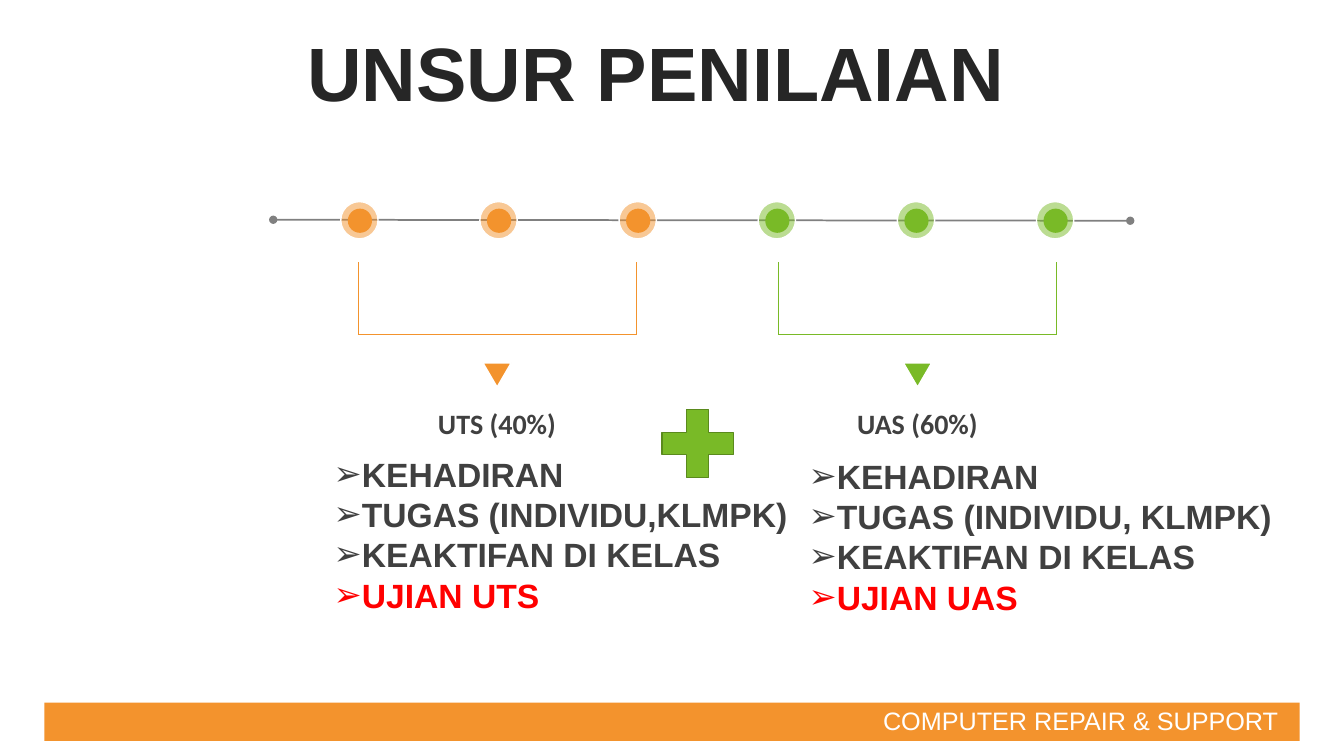
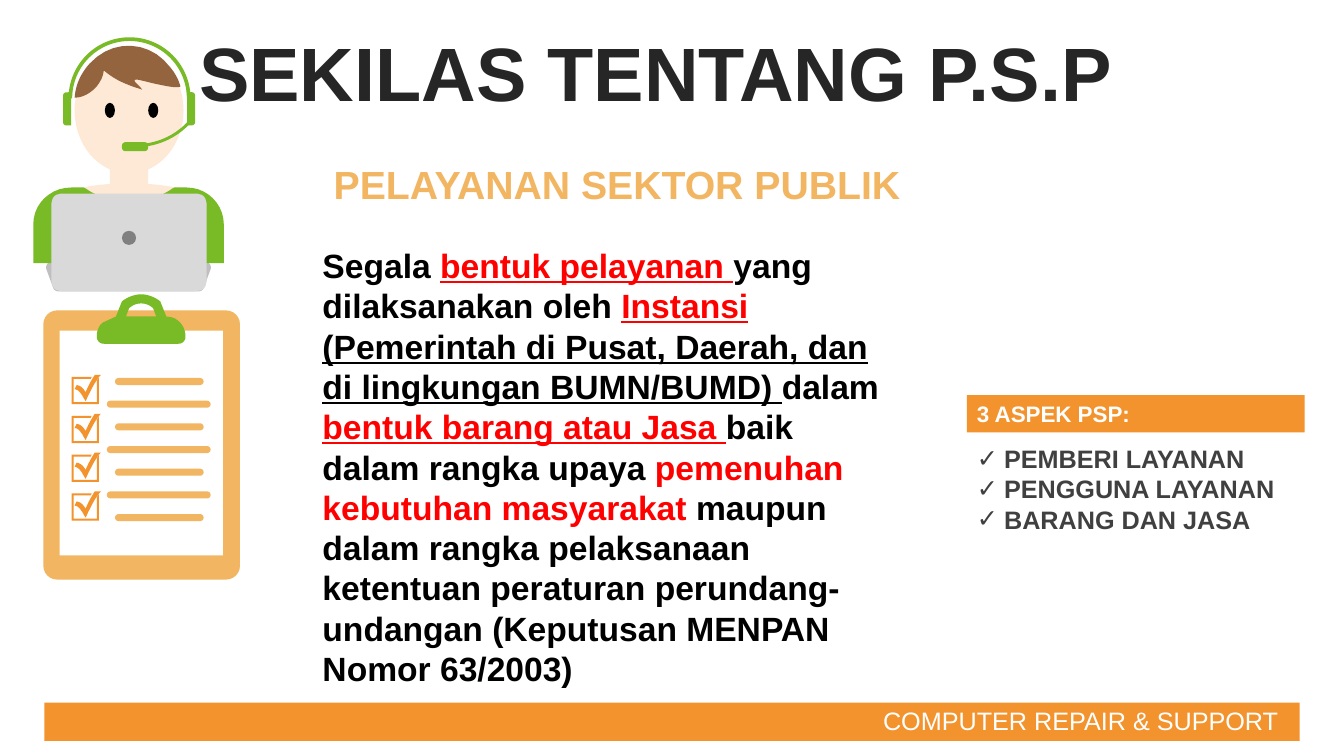
from lxml import etree
from pptx import Presentation
from pptx.dml.color import RGBColor
from pptx.enum.shapes import MSO_CONNECTOR, MSO_SHAPE
from pptx.enum.text import MSO_ANCHOR, PP_ALIGN
from pptx.oxml.ns import qn
from pptx.util import Inches, Pt

RECT, OVAL, ROUND = MSO_SHAPE.RECTANGLE, MSO_SHAPE.OVAL, MSO_SHAPE.ROUNDED_RECTANGLE
ARC, CAP = MSO_SHAPE.BLOCK_ARC, MSO_SHAPE.ROUND_2_SAME_RECTANGLE
TRIANGLE, PLUS = MSO_SHAPE.ISOSCELES_TRIANGLE, MSO_SHAPE.MATH_PLUS
STRAIGHT = MSO_CONNECTOR.STRAIGHT
TOP, MIDDLE = MSO_ANCHOR.TOP, MSO_ANCHOR.MIDDLE
LEFT, CENTER = PP_ALIGN.LEFT, PP_ALIGN.CENTER

ORANGE, GREEN, SAND, SKIN = "F3932D", "79BA27", "F2B662", "FDE9D5"
WHITE, BLACK, RED, GREY = "FFFFFF", "000000", "FF0000", "808080"
DARK, TEXT = "262626", "404040"
OUTLINE = "outline"

FOOTER = "COMPUTER REPAIR & SUPPORT"
TITLES = ["UNSUR PENILAIAN", "SEKILAS TENTANG P.S.P"]

EXAMS = [
    {"name": "UTS (40%)", "color": ORANGE, "bracket": 3.55, "list": (3.31, 4.45, 4.56, 1.72),
     "items": ["KEHADIRAN", "TUGAS (INDIVIDU,KLMPK)", "KEAKTIFAN DI KELAS"], "final": "UJIAN UTS"},
    {"name": "UAS (60%)", "color": GREEN, "bracket": 7.72, "list": (8.02, 4.47, 4.83, 1.72),
     "items": ["KEHADIRAN", "TUGAS (INDIVIDU, KLMPK)", "KEAKTIFAN DI KELAS"], "final": "UJIAN UAS"},
]

SUBTITLE = "PELAYANAN SEKTOR PUBLIK"
DEFINITION = [
    ("Segala ", BLACK, False),
    ("bentuk pelayanan ", RED, True),
    ("yang dilaksanakan oleh ", BLACK, False),
    ("Instansi ", RED, True),
    ("(Pemerintah di Pusat, Daerah, dan di lingkungan BUMN/BUMD) ", BLACK, True),
    ("dalam ", BLACK, False),
    ("bentuk barang atau Jasa ", RED, True),
    ("baik dalam rangka upaya ", BLACK, False),
    ("pemenuhan kebutuhan masyarakat ", RED, False),
    ("maupun dalam rangka pelaksanaan ketentuan peraturan perundang-undangan "
     "(Keputusan MENPAN Nomor 63/2003)", BLACK, False),
]
ASPECT_HEAD = "3 ASPEK PSP:"
ASPECTS = ["PEMBERI LAYANAN", "PENGGUNA LAYANAN", "BARANG DAN JASA"]

LAPTOP_BASE = [[(0.51, 2.6), (2.04, 2.6), (2.08, 2.6, 2.1, 2.64, 2.09, 2.67), (2.02, 2.86),
                (2.01, 2.88, 1.99, 2.89, 1.97, 2.89), (0.58, 2.89),
                (0.56, 2.89, 0.54, 2.88, 0.53, 2.86), (0.46, 2.67),
                (0.45, 2.64, 0.47, 2.6, 0.51, 2.6)]]
SHIRT = [[(0.71, 1.86), (0.83, 1.86), (0.85, 1.87), (0.94, 1.94, 1.1, 1.99, 1.28, 1.99),
          (1.46, 1.99, 1.62, 1.94, 1.71, 1.87), (1.73, 1.86), (1.85, 1.86),
          (2.05, 1.86, 2.22, 2.02, 2.22, 2.23), (2.22, 2.61), (0.33, 2.61), (0.33, 2.23),
          (0.33, 2.02, 0.5, 1.86, 0.71, 1.86)]]
HAIR = [[(0.74, 0.97), (0.75, 0.84, 0.8, 0.73, 0.89, 0.63), (1.12, 0.38, 1.49, 0.4, 1.69, 0.67),
         (1.74, 0.73, 1.77, 0.79, 1.79, 0.86), (1.73, 0.89, 1.43, 0.8, 1.36, 0.79),
         (1.29, 0.79, 1.38, 0.84, 1.41, 0.89), (1.36, 0.87, 1.18, 0.83, 1.03, 0.7),
         (1.01, 0.85, 0.87, 0.97, 0.74, 0.97)]]
CLIP = [[(1.4, 2.92), (1.47, 2.92, 1.54, 2.95, 1.59, 2.99), (1.65, 3.14),
         (1.76, 3.14, 1.84, 3.23, 1.84, 3.34), (1.84, 3.38, 1.81, 3.41, 1.77, 3.41), (1.03, 3.41),
         (0.99, 3.41, 0.96, 3.38, 0.96, 3.34), (0.96, 3.28, 0.98, 3.23, 1.02, 3.2), (1.15, 3.14),
         (1.21, 2.99), (1.26, 2.95, 1.33, 2.92, 1.4, 2.92)],
        [(1.4, 3.01), (1.35, 3.01, 1.31, 3.03, 1.28, 3.06), (1.25, 3.14), (1.55, 3.14),
         (1.52, 3.06), (1.49, 3.03, 1.45, 3.01, 1.4, 3.01)]]
CHECK = [[(0.71, 3.74), (0.91, 3.74), (0.9, 3.76), (0.73, 3.76), (0.73, 3.99), (0.96, 3.99),
          (0.96, 3.78), (0.98, 3.75), (0.98, 4.01), (0.71, 4.01)],
         [(1, 3.72), (0.95, 3.77, 0.89, 3.89, 0.85, 3.98), (0.82, 3.94, 0.8, 3.87, 0.74, 3.86),
          (0.76, 3.82), (0.81, 3.83, 0.82, 3.85, 0.85, 3.89), (0.88, 3.82, 0.89, 3.8, 0.94, 3.72)]]

AGENT = [
    (OVAL, (0.74, 0.47, 1.08, 1.25), SKIN, {}),
    (ARC, (0.68, 0.37, 1.21, 1.21), GREEN, {"adj": (108, 0, 0.03)}),
    (CAP, (1.73, 1.04, 0.33, 0.08), GREEN, {"adj": (0.4, 0), "rot": 90}),
    (CAP, (0.5, 1.04, 0.33, 0.08), GREEN, {"adj": (0.4, 0), "rot": 270}),
    (ARC, (0.62, 0, 1.46, 1.46), GREEN, {"adj": (25.78, 53.31, 0.02)}),
    (ROUND, (1.21, 1.41, 0.26, 0.09), GREEN, {"adj": (0.38,)}),
    (OUTLINE, LAPTOP_BASE, "BFBFBF", {}),
    (OVAL, (0.67, 1.82, 1.22, 0.24), SKIN, {}),
    (OUTLINE, SHIRT, GREEN, {}),
    (RECT, (1.09, 1.57, 0.38, 0.31), SKIN, {}),
    (OVAL, (1.04, 1.02, 0.1, 0.15), BLACK, {}),
    (OVAL, (1.47, 1.02, 0.1, 0.15), BLACK, {}),
    (OUTLINE, HAIR, "94643F", {}),
    (ROUND, (0.51, 1.92, 1.54, 0.97), "D9D9D9", {"adj": (0.1,)}),
    (OVAL, (1.21, 2.29, 0.14, 0.14), GREY, {}),
]
CLIPBOARD = [
    (ROUND, (0.43, 3.08, 1.95, 2.67), SAND, {"adj": (0.07,)}),
    (RECT, (0.59, 3.28, 1.62, 2.23), WHITE, {}),
    (OUTLINE, CLIP, GREEN, {}),
]


def rgb(color):
    """Turn a hex string into a colour."""
    return RGBColor.from_string(color)


def inches(values):
    """Turn numbers into lengths."""
    return [Inches(v) for v in values]


def paint(shape, color, line=None, alpha=None):
    """Give a shape its fill and its outline of one point, if any."""
    shape.shadow.inherit = False
    shape.fill.solid()
    shape.fill.fore_color.rgb = rgb(color)
    if alpha:
        clr = shape.element.spPr.find(qn("a:solidFill")).find(qn("a:srgbClr"))
        etree.SubElement(clr, qn("a:alpha")).set("val", str(alpha * 1000))
    if line:
        shape.line.color.rgb = rgb(line)
        shape.line.width = Pt(1)
    else:
        shape.line.fill.background()
    return shape


def add_preset(s, kind, box, color, adj=(), rot=0, **style):
    """Add a painted preset shape."""
    shape = s.shapes.add_shape(kind, *inches(box))
    for i, value in enumerate(adj):
        shape.adjustments[i] = value
    shape.rotation = rot
    return paint(shape, color, **style)


def flatten(contour, steps=10):
    """Turn points and Bezier segments into points in thousandths of an inch."""
    points = [contour[0]]
    for seg in contour[1:]:
        if len(seg) == 2:
            points.append(seg)
            continue
        nodes = [points[-1], seg[:2], seg[2:4], seg[4:]]
        for t in (i / steps for i in range(1, steps + 1)):
            weights = ((1 - t) ** 3, 3 * t * (1 - t) ** 2, 3 * t * t * (1 - t), t ** 3)
            points.append(tuple(sum(w * n[k] for w, n in zip(weights, nodes)) for k in (0, 1)))
    return [(x * 1000, y * 1000) for x, y in points]


def add_outline(s, contours, color, dy=0):
    """Add a painted freeform, moved down by dy inches."""
    builder = None
    for contour in contours:
        points = [(x, y + dy * 1000) for x, y in flatten(contour)]
        if builder is None:
            builder = s.shapes.build_freeform(*points[0], scale=Inches(1) / 1000)
        else:
            builder.move_to(*points[0])
        builder.add_line_segments(points[1:], close=True)
    return paint(builder.convert_to_shape(), color)


def draw(s, parts):
    """Draw a list of presets and outlines from back to front."""
    for kind, form, color, options in parts:
        if kind == OUTLINE:
            add_outline(s, form, color)
        else:
            add_preset(s, kind, form, color, **options)


def add_line(s, start, end, color, width, ends=None):
    """Add a straight line, with the same mark at both ends if named."""
    line = s.shapes.add_connector(STRAIGHT, *inches(start + end))
    line.line.color.rgb = rgb(color)
    line.line.width = Pt(width)
    if ends:
        ln = line.element.spPr.find(qn("a:ln"))
        for tag in ("a:headEnd", "a:tailEnd"):
            etree.SubElement(ln, qn(tag)).set("type", ends)
    etree.SubElement(line.element.spPr, qn("a:effectLst"))


def write(shape, paragraphs, size, font="Arial", bold=True, align=LEFT, anchor=TOP,
          side=0.1, left=None, spacing=None, bullet=None, indent=0):
    """Fill a shape with paragraphs, each a list of (text, colour, underline) runs."""
    tf = shape.text_frame
    frame = {"word_wrap": True, "vertical_anchor": anchor,
             "margin_left": Inches(side if left is None else left), "margin_right": Inches(side),
             "margin_top": Inches(0.05), "margin_bottom": Inches(0.05)}
    for name, value in frame.items():
        setattr(tf, name, value)
    for i, runs in enumerate(paragraphs):
        p = tf.add_paragraph() if i else tf.paragraphs[0]
        p.alignment = align
        if spacing:
            p.line_spacing = spacing
        if bullet:
            ppr = p._p.get_or_add_pPr()
            ppr.set("marL", str(Inches(indent)))
            ppr.set("indent", str(-Inches(indent)))
            etree.SubElement(ppr, qn("a:buFont")).set("typeface", "Arial")
            etree.SubElement(ppr, qn("a:buChar")).set("char", bullet)
        for text, color, underline in runs:
            r = p.add_run()
            r.text = text
            style = {"name": font, "size": Pt(size), "bold": bold, "underline": underline}
            for name, value in style.items():
                setattr(r.font, name, value)
            r.font.color.rgb = rgb(color)


def add_text(s, box, paragraphs, size, **options):
    """Add a text box."""
    write(s.shapes.add_textbox(*inches(box)), paragraphs, size, **options)


def plain(lines, color):
    """Make one single-run paragraph of each line."""
    return [[(line, color, False)] for line in lines]


def add_slide(prs, layout, title):
    """Add a slide with its formatted title."""
    s = prs.slides.add_slide(layout)
    shape = s.shapes.title
    box = dict(zip(("left", "top", "width", "height"), inches((0, 0.37, 13.01, 0.79))))
    for name, value in box.items():
        setattr(shape, name, value)
    write(shape, plain([title], DARK), 54, align=CENTER, anchor=MIDDLE, spacing=0.9)
    return s


def add_footer(s, layout):
    """Draw the footer band and move it into the layout."""
    for ph in list(layout.placeholders)[1:]:
        layout.shapes.element.remove(ph.element)
    band = add_preset(s, RECT, (0.44, 6.97, 12.45, 0.38), ORANGE)
    label = s.shapes.add_textbox(*inches((8.66, 6.95, 4.23, 0.4)))
    write(label, plain([FOOTER], WHITE), 18, bold=False, anchor=MIDDLE)
    for shape in (band, label):
        layout.shapes.element.append(shape.element)


def build_grading(s):
    """Draw the timeline and the two exams."""
    add_line(s, (2.71, 2.18), (11.21, 2.19), GREY, 1.25, "oval")
    for i in range(6):
        x, color = 3.57 + 1.38 * i, EXAMS[i // 3]["color"]
        add_preset(s, OVAL, (x - 0.19, 2, 0.37, 0.37), color, line=WHITE, alpha=50)
        add_preset(s, OVAL, (x - 0.12, 2.07, 0.24, 0.24), color)
    for exam in EXAMS:
        x, color = exam["bracket"], exam["color"]
        corners = [(x, 2.6), (x, 3.32), (x + 2.76, 3.32), (x + 2.76, 2.6)]
        for start, end in zip(corners, corners[1:]):
            add_line(s, start, end, color, 0.5)
        mid = x + 1.38
        add_preset(s, TRIANGLE, (mid - 0.14, 3.6, 0.28, 0.24), color, rot=180, line=WHITE)
        add_text(s, (mid - 1.12, 3.98, 2.24, 0.44), plain([exam["name"]], TEXT), 20,
                 font="Calibri", align=CENTER, side=0)
        items = plain(exam["items"], TEXT) + plain([exam["final"]], RED)
        add_text(s, exam["list"], items, 24, side=0, bullet="➢", indent=0.25)
    add_preset(s, PLUS, (6.44, 3.94, 0.96, 0.92), GREEN, line="5A8A1D")


def build_service(s):
    """Draw the definition, the agent, the clipboard and the three aspects."""
    add_text(s, (3.1, 1.22, 6.65, 1.16), plain([SUBTITLE], SAND), 28,
             anchor=MIDDLE, left=0.21, spacing=1.1)
    add_text(s, (3.1, 2.38, 5.88, 4.54), [DEFINITION], 24)
    draw(s, AGENT + CLIPBOARD)
    for i in range(7):
        x, width = ((1.14, 0.88), (1.06, 1.03))[i % 2]
        add_preset(s, ROUND, (x, 3.75 + 0.225 * i, width, 0.07), SAND, adj=(0.5,))
    for i in range(4):
        add_outline(s, CHECK, ORANGE, 0.385 * i)
    head = add_preset(s, RECT, (9.59, 3.92, 3.35, 0.37), ORANGE)
    write(head, plain([ASPECT_HEAD], WHITE), 16, anchor=MIDDLE)
    add_text(s, (9.59, 4.35, 3.35, 1.01), plain(ASPECTS, TEXT), 18, bullet="✓", indent=0.27)


def main():
    """Build and save the two slides."""
    prs = Presentation()
    prs.slide_width, prs.slide_height = inches((13.33, 7.5))
    layout = prs.slide_layouts[5]
    grading, service = [add_slide(prs, layout, title) for title in TITLES]
    add_footer(grading, layout)
    build_grading(grading)
    build_service(service)
    prs.save("out.pptx")


if __name__ == "__main__":
    main()
